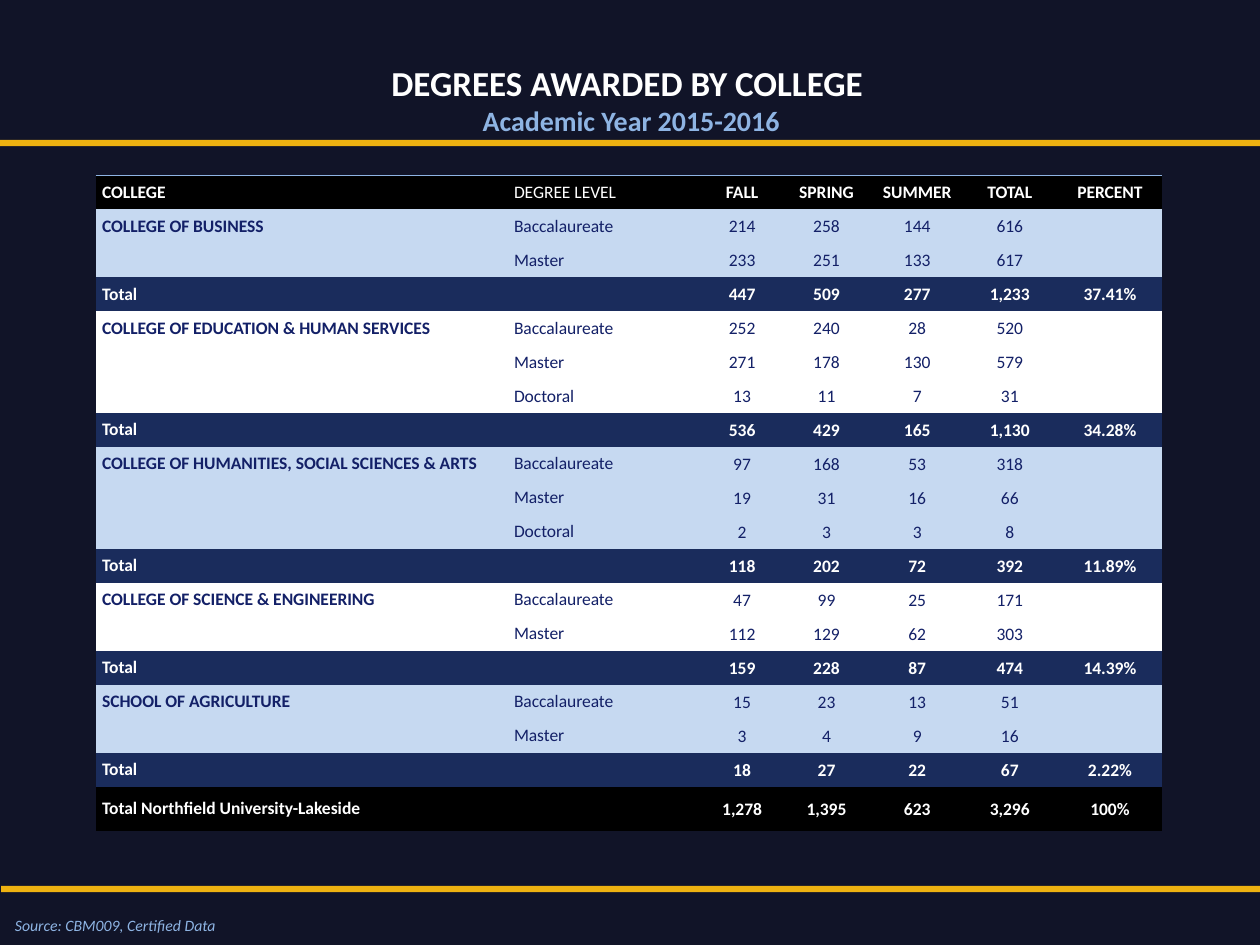
from dataclasses import dataclass
from lxml import etree
from pptx import Presentation
from pptx import util as u
from pptx.dml.color import RGBColor
from pptx.enum import shapes, text
from pptx.oxml.ns import qn


@dataclass
class Theme:
    font: str = "Calibri"
    back: str = "111428"
    gold: str = "EEB211"
    sky: str = "8EB4E3"
    pale: str = "C6D9F1"
    white: str = "FFFFFF"
    black: str = "000000"
    navy: str = "1A2C5C"
    ink: str = "132067"
    head: int = 20
    sub: int = 16
    body: int = 10
    note: int = 9


look = Theme()
LEFT, MID = text.PP_ALIGN.LEFT, text.PP_ALIGN.CENTER


def write(par, words, size=look.body, color=look.white, bold=False, italic=False, align=LEFT):
    par.alignment = align
    if not words:
        etree.SubElement(par._p, qn("a:endParaRPr"), sz=str(size * 100))
        return
    run = par.add_run()
    run.text = words
    font = run.font
    font.name, font.size, font.bold, font.italic = look.font, u.Pt(size), bold, italic
    font.color.rgb = RGBColor.from_string(color)


deck = Presentation()
deck.slide_width, deck.slide_height = u.Inches(10), u.Inches(7.5)
slide = deck.slides.add_slide(deck.slide_layouts[5])
slide.background.fill.solid()
slide.background.fill.fore_color.rgb = RGBColor.from_string(look.back)

colleges = [
    ("COLLEGE OF BUSINESS", "37.41%", [(214, 258, 144), (233, 251, 133)]),
    ("COLLEGE OF EDUCATION & HUMAN SERVICES", "34.28%",
     [(252, 240, 28), (271, 178, 130), (13, 11, 7)]),
    ("COLLEGE OF HUMANITIES, SOCIAL SCIENCES & ARTS", "11.89%",
     [(97, 168, 53), (19, 31, 16), (2, 3, 3)]),
    ("COLLEGE OF SCIENCE & ENGINEERING", "14.39%", [(47, 99, 25), (112, 129, 62)]),
    ("SCHOOL OF AGRICULTURE", "2.22%", [(15, 23, 13), (3, 4, 9)]),
]
levels = ["Baccalaureate", "Master", "Doctoral"]

rows = [(["COLLEGE", "DEGREE LEVEL", "FALL", "SPRING", "SUMMER", "TOTAL", "PERCENT"],
         look.black, look.white)]
grand = [0, 0, 0]
for i, (name, share, counts) in enumerate(colleges):
    fill = look.white if i % 2 else look.pale
    for j, terms in enumerate(counts):
        label = "" if j else name
        rows.append(([label, levels[j], *terms, sum(terms), ""], fill, look.ink))
    sums = [sum(term) for term in zip(*counts)]
    grand = [a + b for a, b in zip(grand, sums)]
    rows.append((["Total", "", *sums, sum(sums), share], look.navy, look.white))
rows.append((["Total Northfield University-Lakeside", "", *grand, sum(grand), "100%"],
             look.black, look.white))

widths = [3.27, 1.56, 0.6, 0.74, 0.7, 0.77, 0.82]
last = len(rows) - 1
table = slide.shapes.add_table(len(rows), len(widths), u.Inches(0.76), u.Inches(1.39),
                               u.Inches(8.46), u.Inches(5.21)).table
table.first_row = table.horz_banding = False
style = table._tbl.tblPr.find(qn("a:tableStyleId"))
style.text = "{2D5ABB26-0587-4C30-8999-92F81FD0307C}"
for col, width in zip(table.columns, widths):
    col.width = u.Inches(width)

for r, (values, fill, color) in enumerate(rows):
    table.rows[r].height = u.Inches(0.35 if r == last else 0.27)
    for c, value in enumerate(values):
        cell = table.cell(r, c)
        cell.fill.solid()
        cell.fill.fore_color.rgb = RGBColor.from_string(fill)
        cell.vertical_anchor = text.MSO_ANCHOR.MIDDLE
        side = 0.05 if c < 2 else 0.01
        cell.margin_left = cell.margin_right = u.Inches(side)
        cell.margin_top = u.Inches(side)
        cell.margin_bottom = u.Inches(side if c < 2 else 0)
        words = f"{value:,}" if isinstance(value, int) else value
        bold = c == 0 or (color == look.white and c != 1)
        write(cell.text_frame.paragraphs[0], words, color=color, bold=bold,
              align=LEFT if c < 2 else MID)
        if r == 0:
            line = etree.Element(qn("a:lnT"), w=str(u.Pt(0.75)))
            paint = etree.SubElement(line, qn("a:solidFill"))
            etree.SubElement(paint, qn("a:srgbClr"), val=look.sky)
            cell._tc.tcPr.insert(0, line)

title = slide.shapes.title
title.left, title.top = u.Inches(1.73), u.Inches(0.44)
title.width, title.height = u.Inches(6.56), u.Inches(1.01)
frame = title.text_frame
frame.auto_size = text.MSO_AUTO_SIZE.NONE
frame.vertical_anchor = text.MSO_ANCHOR.TOP
write(frame.paragraphs[0], "DEGREES AWARDED BY COLLEGE ", size=look.head, bold=True, align=MID)
write(frame.add_paragraph(), "Academic Year 2015-2016", size=look.sub, color=look.sky,
      bold=True, align=MID)

source = slide.shapes.add_textbox(u.Inches(0.02), u.Inches(7.22), u.Inches(1.89), u.Inches(0.25))
write(source.text_frame.paragraphs[0], "Source: CBM009, Certified Data", size=look.note,
      color=look.sky, italic=True)

for left, top in [(0.01, 7.03), (0, 1.11)]:
    bar = slide.shapes.add_shape(shapes.MSO_SHAPE.RECTANGLE, u.Inches(left), u.Inches(top),
                                 u.Inches(10), u.Inches(0.05))
    bar.shadow.inherit = False
    bar.fill.solid()
    bar.fill.fore_color.rgb = RGBColor.from_string(look.gold)
    bar.line.fill.background()

deck.save("out.pptx")
